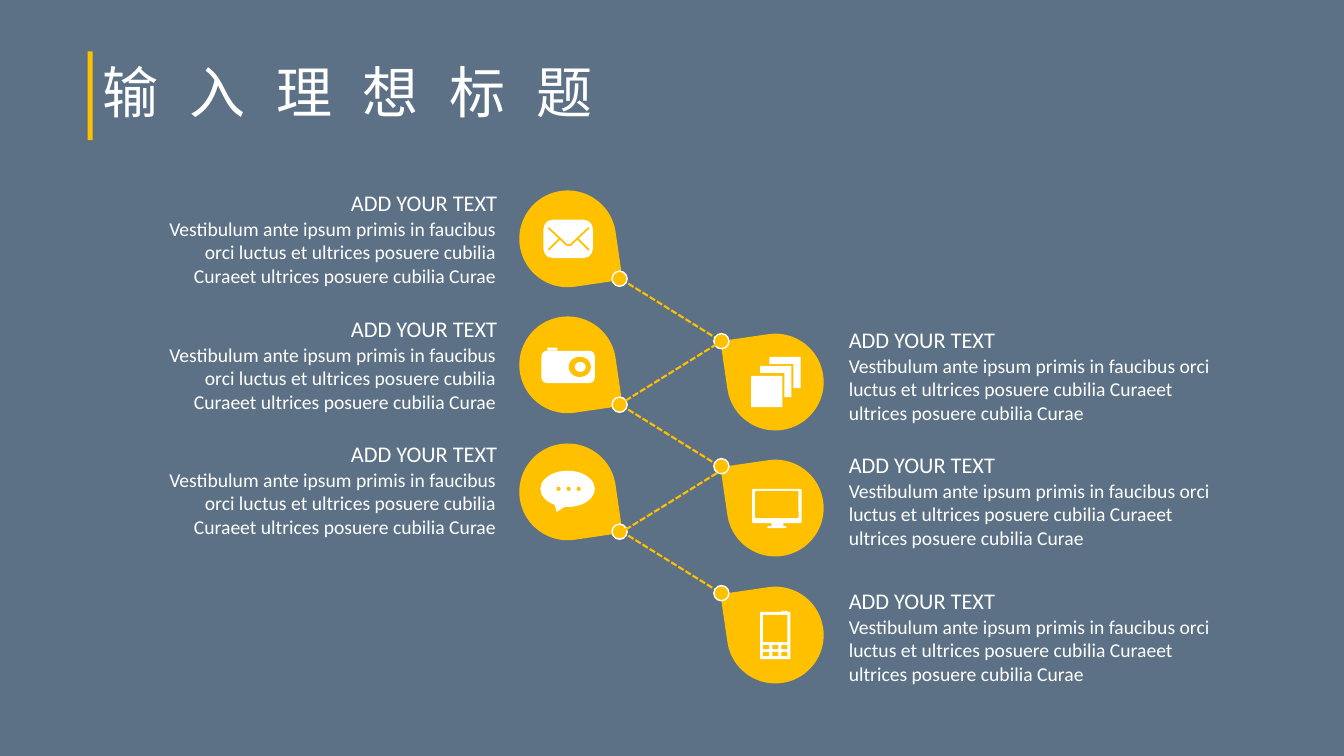
from itertools import pairwise, product
from lxml.etree import SubElement
from pptx import Presentation
from pptx.dml.color import RGBColor
from pptx.enum.dml import MSO_LINE
from pptx.enum.shapes import MSO_CONNECTOR, MSO_SHAPE
from pptx.enum.text import MSO_ANCHOR, PP_ALIGN
from pptx.oxml.ns import qn
from pptx.util import Inches, Pt

TITLE = "输入理想标题"
HEAD = "ADD YOUR TEXT"
BODY = ("Vestibulum ante ipsum primis in faucibus orci luctus et ultrices "
        "posuere cubilia Curaeet ultrices posuere cubilia Curae")
SLATE, GOLD, WHITE = "5C7185", "FFC000", "FFFFFF"

SIDES = [
    {"drop": 5.15, "turn": 81.7, "tops": [1.89, 3.14, 4.4],
     "dot": 6.07, "dots": [2.69, 3.94, 5.2],
     "head": 3.05, "body": 1.41, "wide": 3.61, "tall": 1.04,
     "texts": [1.83, 3.08, 4.32], "align": PP_ALIGN.RIGHT},
    {"drop": 7.21, "turn": 261.7, "tops": [3.31, 4.56, 5.82],
     "dot": 7.08, "dots": [3.31, 4.55, 5.81],
     "head": 8.32, "body": 8.32, "wide": 3.98, "tall": 0.81,
     "texts": [3.19, 4.43, 5.78], "align": PP_ALIGN.LEFT},
]
DOWN = [(6.16, 2.77), (6.16, 4.02), (6.16, 5.27)]
BACK = [(7.18, 3.37), (7.18, 4.65)]

RECT, ROUND, OVAL = MSO_SHAPE.RECTANGLE, MSO_SHAPE.ROUNDED_RECTANGLE, MSO_SHAPE.OVAL
BUBBLE = MSO_SHAPE.OVAL_CALLOUT
ICONS = [
    (ROUND, 5.39, 2.18, 0.49, 0.38, WHITE, [0.24]),
    (ROUND, 5.37, 3.48, 0.53, 0.32, WHITE, [0.17]),
    (RECT, 5.43, 3.45, 0.1, 0.03, WHITE, []),
    (OVAL, 5.64, 3.54, 0.22, 0.2, GOLD, []),
    (OVAL, 5.7, 3.59, 0.11, 0.1, WHITE, []),
    (BUBBLE, 5.36, 4.67, 0.54, 0.36, WHITE, [-0.2, 0.64]),
    (RECT, 7.45, 3.73, 0.31, 0.31, WHITE, []),
    (ROUND, 7.46, 4.85, 0.49, 0.34, WHITE, [0.04]),
    (ROUND, 7.49, 4.87, 0.43, 0.27, GOLD, [0.05]),
    (RECT, 7.65, 5.19, 0.12, 0.03, WHITE, []),
    (ROUND, 7.61, 5.22, 0.19, 0.02, WHITE, [0.5]),
    (RECT, 7.54, 6.07, 0.3, 0.47, WHITE, []),
    (RECT, 7.75, 6.06, 0.06, 0.02, WHITE, []),
    (RECT, 7.57, 6.1, 0.24, 0.27, GOLD, []),
]
FOLDS = [
    [(5.44, 2.26), (5.6, 2.41), (5.62, 2.43), (5.66, 2.43), (5.68, 2.41), (5.84, 2.26)],
    [(5.44, 2.48), (5.55, 2.37)],
    [(5.84, 2.48), (5.73, 2.37)],
]
SHEETS = [(7.54, 3.63), (7.63, 3.54)]
SHEET, BAND = 0.31, 0.07

deck = Presentation()
deck.slide_width, deck.slide_height = Inches(13.33), Inches(7.5)
slide = deck.slides.add_slide(deck.slide_layouts[6])
shapes = slide.shapes


def paint(fill, hue):
    fill.solid()
    fill.fore_color.rgb = RGBColor.from_string(hue)


def shape(kind, x, y, w, h, hue, adjust=(), edge=None, turn=0):
    item = shapes.add_shape(kind, Inches(x), Inches(y), Inches(w), Inches(h))
    item.shadow.inherit = False
    item.rotation = turn
    for i, value in enumerate(adjust):
        item.adjustments[i] = value
    paint(item.fill, hue)
    if edge:
        paint(item.line.fill, edge)
        item.line.width = Pt(1)
    else:
        item.line.fill.background()


def line(start, end, width, dash=None):
    item = shapes.add_connector(MSO_CONNECTOR.STRAIGHT, *map(Inches, (*start, *end)))
    paint(item.line.fill, GOLD)
    item.line.width = Pt(width)
    if dash:
        item.line.dash_style = dash
    SubElement(item._element.spPr, qn("a:effectLst"))


def text(words, x, y, w, h, size, align=PP_ALIGN.LEFT, font="Calibri"):
    frame = shapes.add_textbox(Inches(x), Inches(y), Inches(w), Inches(h)).text_frame
    frame.word_wrap = True
    para = frame.paragraphs[0]
    para.alignment = align
    run = para.add_run()
    run.text = words
    run.font.size = Pt(size)
    paint(run.font.fill, WHITE)
    run.font.name = font
    return frame, para, run


def title():
    shape(RECT, 0.87, 0.51, 0.05, 0.88, GOLD)
    font = "Noto Sans CJK SC"
    frame, para, run = text(TITLE, 0.92, 0.22, 11.5, 1.45, 40, font=font)
    frame.vertical_anchor = MSO_ANCHOR.MIDDLE
    para.line_spacing = 0.9
    props = run._r.get_or_add_rPr()
    props.set("spc", "2200")
    SubElement(props, qn("a:ea")).set("typeface", font)


def steps():
    for side in SIDES:
        for y in side["tops"]:
            shape(MSO_SHAPE.TEAR, side["drop"], y, 0.96, 0.96, GOLD, turn=side["turn"])
    for x, y in DOWN:
        line((x, y), (x + 1, y + 0.62), 1.5, MSO_LINE.SQUARE_DOT)
    for side in SIDES:
        for y in side["dots"]:
            shape(OVAL, side["dot"], y, 0.15, 0.15, GOLD, edge=WHITE)
    for x, y in BACK:
        line((x, y), (x - 1, y + 0.62), 1.5, MSO_LINE.SQUARE_DOT)
    for side in SIDES:
        for y in side["texts"]:
            text(BODY, side["body"], y + 0.27, side["wide"], side["tall"], 14, side["align"])
            text(HEAD, side["head"], y, 1.98, 0.37, 16, side["align"])


def icons():
    for icon in ICONS:
        shape(*icon)
    for fold in FOLDS:
        for start, end in pairwise(fold):
            line(start, end, 1.25)
    for i in range(3):
        shape(OVAL, 5.52 + 0.1 * i, 4.83, 0.04, 0.04, GOLD)
    for col, row in product(range(3), range(2)):
        shape(RECT, 7.57 + 0.09 * col, 6.4 + 0.07 * row, 0.06, 0.04, GOLD)
    for x, y in SHEETS:
        right, low = x + SHEET, y + SHEET
        path = [(x, y), (right, y), (right, low), (right - BAND, low),
                (right - BAND, y + BAND), (x, y + BAND)]
        points = [(Inches(a), Inches(b)) for a, b in path]
        pen = shapes.build_freeform(*points[0])
        pen.add_line_segments(points[1:], close=True)
        item = pen.convert_to_shape()
        item.shadow.inherit = False
        paint(item.fill, WHITE)
        item.line.fill.background()


paint(slide.background.fill, SLATE)
title()
steps()
icons()
deck.save("out.pptx")
